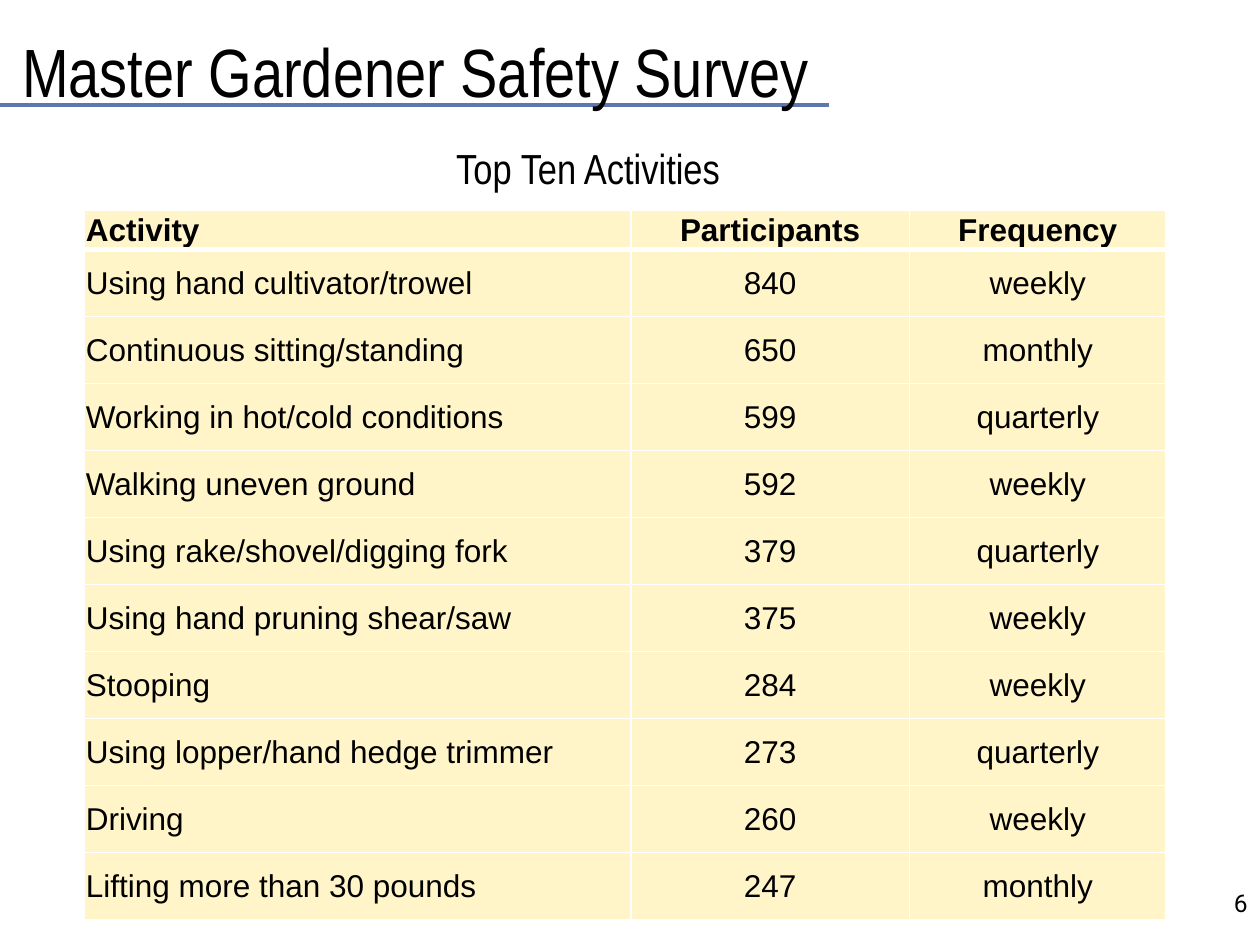
from lxml.etree import SubElement
from pptx import Presentation
from pptx.dml.color import RGBColor as Color
from pptx.enum.shapes import MSO_CONNECTOR as Connector
from pptx.enum.text import MSO_ANCHOR as Anchor, PP_ALIGN as Align
from pptx.oxml.ns import qn
from pptx.util import Cm, Pt

COLORS = {"text": "000000", "rule": "5E78AD", "cell": "FFF5C9", "border": "FFFFFF"}


def write_text(frame, text, alignment, font_format):
    paragraph = frame.paragraphs[0]
    paragraph.text = text
    paragraph.alignment = alignment
    font = paragraph.runs[0].font
    for name, value in font_format.items():
        setattr(font, name, value)
    font.color.rgb = Color.from_string(COLORS["text"])


def add_border(cell, side, width):
    line = SubElement(cell._tc.get_or_add_tcPr(), qn(f"a:{side}"), w=str(Pt(width)))
    fill = SubElement(line, qn("a:solidFill"))
    SubElement(fill, qn("a:srgbClr"), val=COLORS["border"])


presentation = Presentation()
presentation.slide_width = Cm(25.4)
presentation.slide_height = Cm(19.05)
slide = presentation.slides.add_slide(presentation.slide_layouts[6])

# Rule under the title
rule = slide.shapes.add_connector(Connector.STRAIGHT, Cm(0), Cm(2.11), Cm(16.71), Cm(2.11))
rule.line.color.rgb = Color.from_string(COLORS["rule"])
rule.line.width = Pt(2.25)
SubElement(rule._element.spPr, qn("a:effectLst"))

# Title, subtitle and slide number
text_boxes = [
    ("Master Gardener Safety Survey", (0.2, 0.43, 20.32, 1.98),
     Align.LEFT, Anchor.MIDDLE, "Arial Narrow", 39),
    ("Top Ten Activities", (5.72, 2.74, 12.27, 1.27),
     Align.CENTER, Anchor.TOP, "Arial Narrow", 24),
    ("6", (22.66, 17.78, 2.74, 1.27), Align.RIGHT, Anchor.TOP, "Roboto", 14),
]
for text, box, alignment, anchor, font_name, size in text_boxes:
    frame = slide.shapes.add_textbox(*map(Cm, box)).text_frame
    frame.word_wrap = True
    frame.vertical_anchor = anchor
    write_text(frame, text, alignment, {"name": font_name, "size": Pt(size)})

# Activity table
activities = [
    ("Activity", "Participants", "Frequency"),
    ("Using hand cultivator/trowel", "840", "weekly"),
    ("Continuous sitting/standing", "650", "monthly"),
    ("Working in hot/cold conditions", "599", "quarterly"),
    ("Walking uneven ground", "592", "weekly"),
    ("Using rake/shovel/digging fork", "379", "quarterly"),
    ("Using hand pruning shear/saw", "375", "weekly"),
    ("Stooping", "284", "weekly"),
    ("Using lopper/hand hedge trimmer", "273", "quarterly"),
    ("Driving", "260", "weekly"),
    ("Lifting more than 30 pounds", "247", "monthly"),
]
column_widths = [11.02, 5.61, 5.18]
header_height, row_height = 0.72, 1.35
cell_format = {
    "margin_left": Cm(0.03), "margin_right": Cm(0.03),
    "margin_top": Cm(0.03), "margin_bottom": Cm(0),
    "vertical_anchor": Anchor.MIDDLE,
}
table_height = header_height + row_height * (len(activities) - 1)
table = slide.shapes.add_table(
    len(activities), len(column_widths),
    Cm(1.7), Cm(4.24), Cm(sum(column_widths)), Cm(table_height)).table
table.horz_banding = False
for column, width in zip(table.columns, column_widths):
    column.width = Cm(width)

for row_index, values in enumerate(activities):
    is_header = row_index == 0
    table.rows[row_index].height = Cm(header_height if is_header else row_height)
    for column_index, value in enumerate(values):
        cell = table.cell(row_index, column_index)
        for name, setting in cell_format.items():
            setattr(cell, name, setting)
        for side in ("lnL", "lnR", "lnT", "lnB"):
            thick = (row_index, side) in ((0, "lnB"), (1, "lnT"))
            add_border(cell, side, 3 if thick else 1)
        cell.fill.solid()
        cell.fill.fore_color.rgb = Color.from_string(COLORS["cell"])
        write_text(cell.text_frame, value, Align.CENTER if column_index else Align.LEFT,
                   {"name": "Arial", "size": Pt(18), "bold": is_header})

presentation.save("out.pptx")
